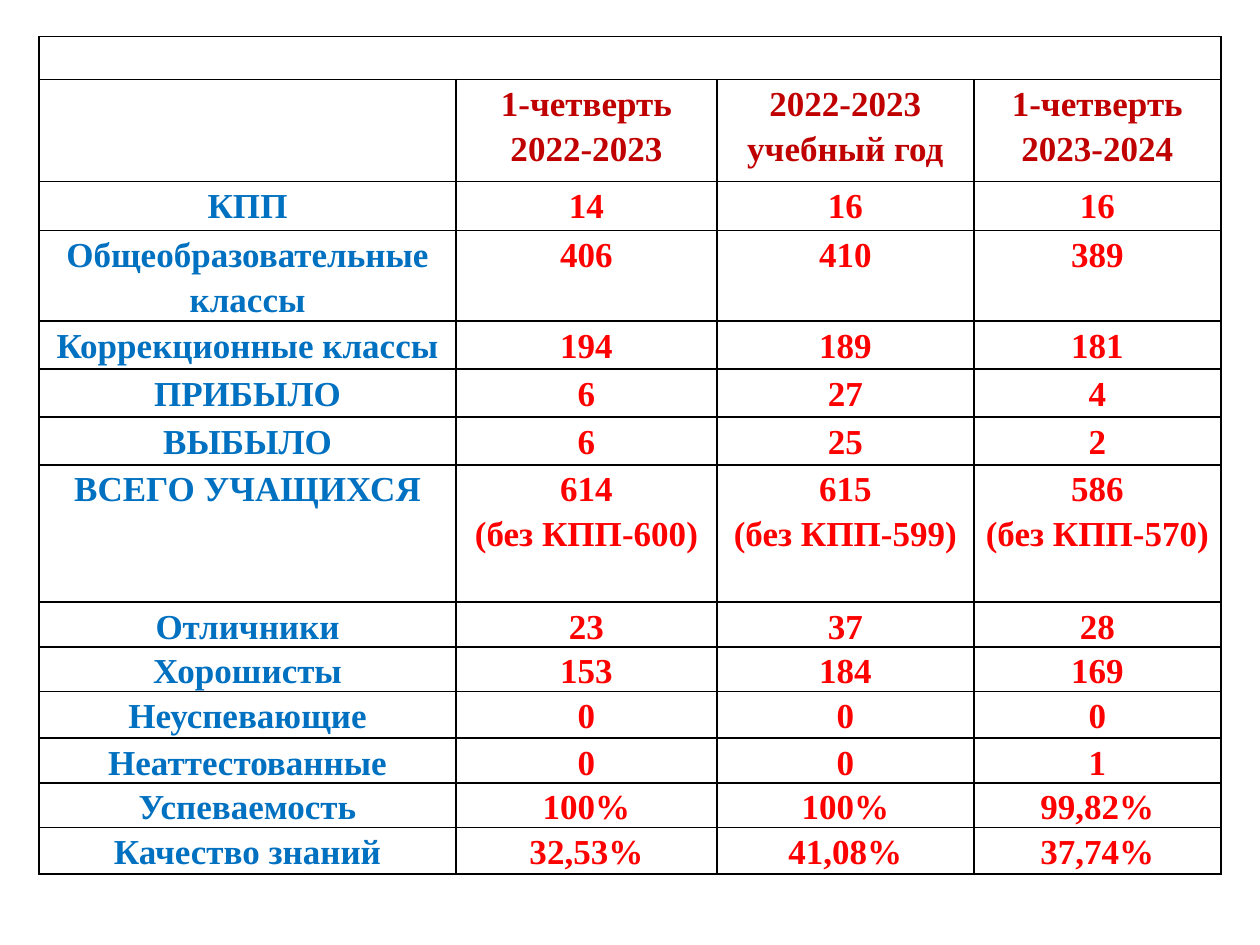
from lxml.etree import SubElement
from pptx import Presentation
from pptx.dml.color import RGBColor
from pptx.enum.text import PP_ALIGN
from pptx.oxml.ns import qn
from pptx.util import Inches, Pt

BLACK = RGBColor(0x00, 0x00, 0x00)
DARK_RED = RGBColor(0xC0, 0x00, 0x00)
RED = RGBColor(0xFF, 0x00, 0x00)
BLUE = RGBColor(0x00, 0x70, 0xC0)

COLUMN_WIDTHS = [3.31, 2.07, 2.04, 1.96]
ROW_HEIGHTS = [0.34, 0.81, 0.39, 0.72, 0.38, 0.38, 0.38, 1.09,
               0.34, 0.34, 0.37, 0.34, 0.34, 0.37]

# The first row is one empty merged cell
ROWS = [
    ["", "", "", ""],
    ["", "1-четверть 2022-2023", "2022-2023 учебный год", "1-четверть 2023-2024"],
    ["КПП", "14", "16", "16"],
    ["Общеобразовательные классы", "406", "410", "389"],
    ["Коррекционные классы", "194", "189", "181"],
    ["ПРИБЫЛО", "6", "27", "4"],
    ["ВЫБЫЛО", "6", "25", "2"],
    ["ВСЕГО УЧАЩИХСЯ", "614\n(без КПП-600)", "615\n(без КПП-599)", "586\n(без КПП-570)"],
    ["Отличники", "23", "37", "28"],
    ["Хорошисты", "153", "184", "169"],
    ["Неуспевающие", "0", "0", "0"],
    ["Неаттестованные", "0", "0", "1"],
    ["Успеваемость", "100%", "100%", "99,82%"],
    ["Качество знаний", "32,53%", "41,08%", "37,74%"],
]


class PageBuilder:
    """Holds the text style and the page being filled."""

    font_name = "Times New Roman"
    font_size = Pt(20)
    line_spacing = 1.15
    side_margin = Inches(0.07)
    border_width = Pt(1)

    def __init__(self, page):
        self.page = page

    def table(self, left, top, widths, heights, rows):
        frame = self.page.shapes.add_table(
            len(rows), len(widths), Inches(left), Inches(top),
            Inches(sum(widths)), Inches(sum(heights)))
        table = frame.table
        table.first_row = False
        table.horz_banding = False
        for column, width in zip(table.columns, widths):
            column.width = Inches(width)
        for row, height in zip(table.rows, heights):
            row.height = Inches(height)
        for row_number, texts in enumerate(rows):
            for column_number, text in enumerate(texts):
                if row_number == 1:
                    color = DARK_RED
                else:
                    color = RED if column_number else BLUE
                self.cell(table.cell(row_number, column_number), text, color)
        return table

    def cell(self, cell, text, color):
        cell.margin_left = cell.margin_right = self.side_margin
        cell.margin_top = cell.margin_bottom = 0
        self.borders(cell)
        cell.fill.background()
        if not text:
            return
        cell.text_frame.text = text
        for para in cell.text_frame.paragraphs:
            para.alignment = PP_ALIGN.CENTER
            para.line_spacing = self.line_spacing
            para.font.name = self.font_name
            para.font.size = self.font_size
            para.font.bold = True
            para.font.color.rgb = color

    def borders(self, cell):
        properties = cell._tc.get_or_add_tcPr()
        for side in ("lnL", "lnR", "lnT", "lnB"):
            line = SubElement(properties, qn(f"a:{side}"), w=str(self.border_width))
            fill = SubElement(line, qn("a:solidFill"))
            SubElement(fill, qn("a:srgbClr"), val=str(BLACK))


def main():
    deck = Presentation()
    deck.slide_width = Inches(10)
    deck.slide_height = Inches(7.5)
    builder = PageBuilder(deck.slides.add_slide(deck.slide_layouts[6]))

    # Pupil numbers and results by period
    table = builder.table(0.31, 0.29, COLUMN_WIDTHS, ROW_HEIGHTS, ROWS)
    table.cell(0, 0).merge(table.cell(0, len(COLUMN_WIDTHS) - 1))

    deck.save("out.pptx")


if __name__ == "__main__":
    main()
